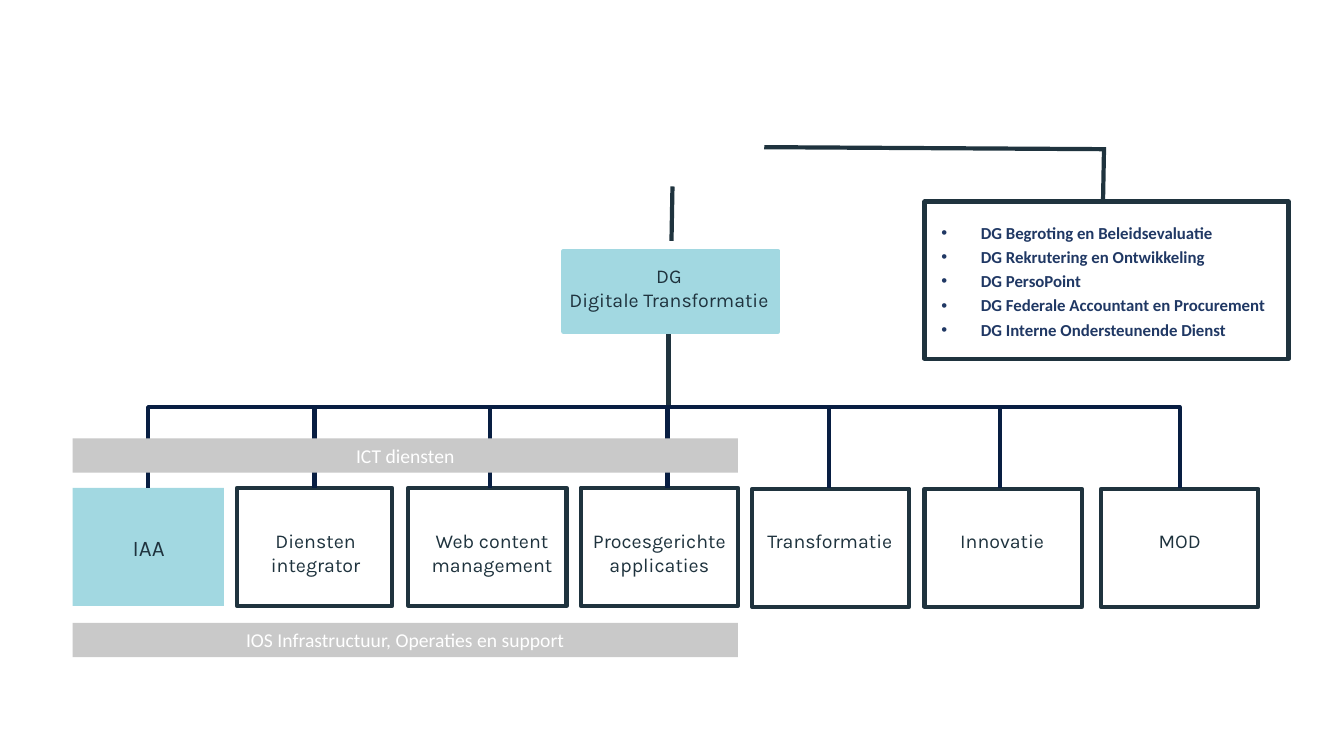
from lxml import etree
from pptx import Presentation
from pptx.dml.color import RGBColor
from pptx.enum.shapes import MSO_CONNECTOR as Connector, MSO_SHAPE as Shape
from pptx.enum.text import MSO_ANCHOR as Anchor, PP_ALIGN as Align
from pptx.oxml.ns import qn
from pptx.util import Emu, Pt

PX = 9144  # 100 px to the inch
DARK = RGBColor(0x1F, 0x33, 0x3E)
NAVY = RGBColor(0x08, 0x1E, 0x42)
BLUE = RGBColor(0x20, 0x38, 0x64)
AQUA = RGBColor(0xA2, 0xD8, 0xE1)
GREY = RGBColor(0xC9, 0xC9, 0xC9)
WHITE = RGBColor(0xFF, 0xFF, 0xFF)

LABEL = {"name": "Karla", "size": Pt(14)}
BIG_LABEL = {"name": "Karla", "size": Pt(16)}
BAR_LABEL = {"name": "Calibri", "size": Pt(14)}
LIST_LABEL = {"name": "Calibri", "size": Pt(12), "bold": True}

BUS_TOP, BOX_TOP, BOX_HEIGHT = 404, 484, 117
LABEL_TOP, LABEL_WIDTH = 520, 182

# name, box left, box top, box width, label left
UNITS = [
    ("Diensten integrator", 235, 484, 154, 222),
    ("Web content management", 405, 484, 157, 397),
    ("Procesgerichte applicaties", 576, 484, 156, 563),
    ("Transformatie", 746, 485, 156, 732),
    ("Innovatie", 917, 485, 156, 903),
    ("MOD", 1092, 485, 156, 1079),
]
DROPS = [312, 486, 662, 822, 992]
DIRECTORATES = [
    "DG Begroting en Beleidsevaluatie",
    "DG Rekrutering en Ontwikkeling",
    "DG PersoPoint",
    "DG Federale Accountant en Procurement",
    "DG Interne Ondersteunende Dienst",
]


def px(*lengths):
    return [Emu(length * PX) for length in lengths]


def write(paragraph, text, font_format, color, align=Align.CENTER):
    paragraph.text = text
    paragraph.alignment = align
    for run in paragraph.runs:
        for name, value in font_format.items():
            setattr(run.font, name, value)
        run.font.color.rgb = color


def add_box(slide, left, top, width, height, fill=None, line=None):
    box = slide.shapes.add_shape(Shape.RECTANGLE, *px(left, top, width, height))
    box.shadow.inherit = False
    if fill is None:
        box.fill.background()
    else:
        box.fill.solid()
        box.fill.fore_color.rgb = fill
    if line is None:
        box.line.fill.background()
    else:
        box.line.color.rgb = line
        box.line.width = Pt(3)
    return box


def add_bar(slide, top, text):
    bar = add_box(slide, 72, top, 660, 34, GREY)
    bar.text_frame.vertical_anchor = Anchor.MIDDLE
    write(bar.text_frame.paragraphs[0], text, BAR_LABEL, WHITE)


def add_label(slide, left, top, width, height, text, font_format=LABEL):
    frame = slide.shapes.add_textbox(*px(left, top, width, height)).text_frame
    frame.word_wrap = True
    write(frame.paragraphs[0], text, font_format, DARK)


def add_line(slide, start, end, color, kind=Connector.STRAIGHT):
    line = slide.shapes.add_connector(kind, *px(*start, *end))
    line.line.color.rgb = color
    line.line.width = Pt(3)
    etree.SubElement(line._element.spPr, qn("a:effectLst"))
    return line


def add_elbow(slide, box, start, end, rotation, flips):
    """Rise from the top of a box and turn once onto the horizontal bus."""
    elbow = add_line(slide, start, end, NAVY, Connector.ELBOW)
    elbow.begin_connect(box, 0)
    # The frame is stored unrotated, so its sides are swapped about the centre.
    width, height = start[1] - end[1], abs(end[0] - start[0])
    left = (start[0] + end[0] - width) // 2
    top = (start[1] + end[1] - height) // 2
    elbow.left, elbow.top, elbow.width, elbow.height = px(left, top, width, height)
    properties = elbow._element.spPr
    properties.find(qn("a:prstGeom")).set("prst", "bentConnector2")
    frame = properties.find(qn("a:xfrm"))
    frame.set("rot", str(rotation * 60000))
    for flip in ("flipH", "flipV"):
        frame.set(flip, str(int(flip in flips)))


def add_bullet_list(slide, left, top, width, height, items):
    frame = slide.shapes.add_textbox(*px(left, top, width, height)).text_frame
    frame.word_wrap = True
    for index, item in enumerate(items):
        paragraph = frame.add_paragraph() if index else frame.paragraphs[0]
        write(paragraph, item, LIST_LABEL, BLUE, Align.LEFT)
        paragraph.line_spacing = 1.2
        properties = paragraph._p.get_or_add_pPr()
        properties.set("marL", str(88 * PX))
        properties.set("indent", str(-39 * PX))
        etree.SubElement(properties, qn("a:buFont"), typeface="Arial")
        etree.SubElement(properties, qn("a:buChar"), char="•")


def main():
    presentation = Presentation()
    presentation.slide_width, presentation.slide_height = px(1333, 750)
    slide = presentation.slides.add_slide(presentation.slide_layouts[6])

    add_line(slide, (667, 185), (666, 239), DARK)
    add_line(slide, (663, 310), (663, BUS_TOP), DARK)
    add_box(slide, 559, 249, 213, 80, AQUA, AQUA)
    add_label(slide, 539, 257, 249, 57, "DG\vDigitale Transformatie")

    iaa = add_box(slide, 72, BOX_TOP, 150, BOX_HEIGHT, AQUA)
    add_label(slide, 72, 525, 151, 37, "IAA", BIG_LABEL)
    boxes = []
    for name, left, top, width, label_left in UNITS:
        boxes.append(add_box(slide, left, top, width, BOX_HEIGHT, line=DARK))
        add_label(slide, label_left, LABEL_TOP, LABEL_WIDTH, 34, name)

    add_elbow(slide, iaa, (147, BOX_TOP), (663, BUS_TOP), 90, ("flipH", "flipV"))
    add_elbow(slide, boxes[-1], (1170, BOX_TOP), (654, BUS_TOP), 270, ("flipV",))
    for box, x in zip(boxes, DROPS):
        drop = add_line(slide, (x, BOX_TOP), (x, BUS_TOP), NAVY)
        if box.left + box.width // 2 == x * PX:
            drop.begin_connect(box, 0)

    add_bar(slide, 435, "ICT diensten")
    add_bar(slide, 618, "IOS Infrastructuur, Operaties en support")

    add_bullet_list(slide, 875, 212, 420, 130, DIRECTORATES)
    add_box(slide, 917, 200, 361, 156, line=DARK)
    add_line(slide, (1095, 146), (1094, 200), DARK)
    add_line(slide, (758, 146), (1095, 148), DARK)

    presentation.save("out.pptx")


if __name__ == "__main__":
    main()
